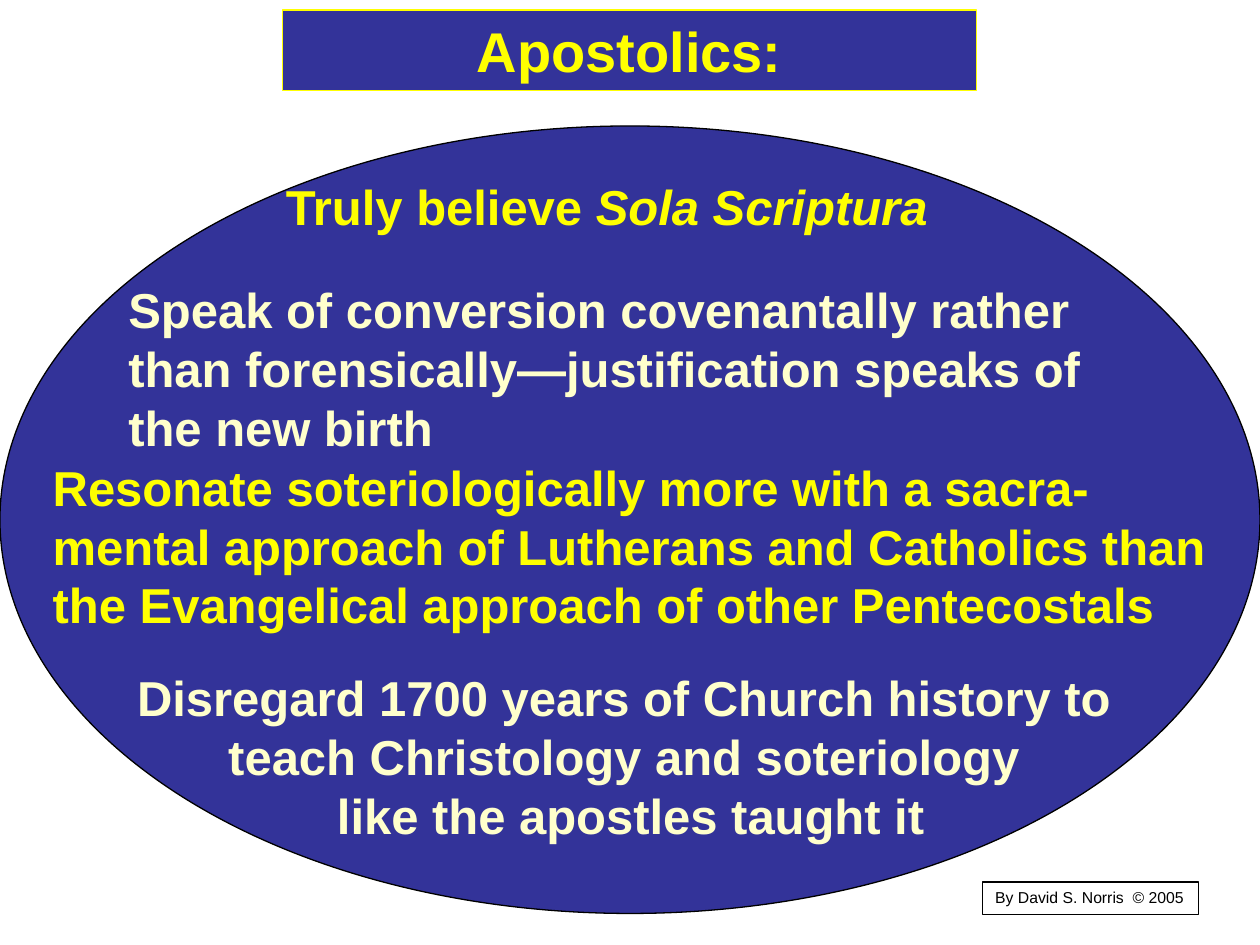
import pptx
import pptx.util
import pptx.dml.color
import pptx.enum.shapes
import pptx.enum.text

Inches = pptx.util.Inches
Shape = pptx.enum.shapes.MSO_SHAPE
Align = pptx.enum.text.PP_ALIGN

COLORS = {"blue": "333399", "yellow": "FFFF00", "cream": "FFFFCC", "black": "000000"}


def color(name):
    return pptx.dml.color.RGBColor.from_string(COLORS[name])


def add_outlined(page, kind, place, line, fill=None):
    """Add a preset shape with a thin outline and an optional fill."""
    shape = page.shapes.add_shape(kind, *map(Inches, place))
    shape.shadow.inherit = False
    if fill:
        shape.fill.solid()
        shape.fill.fore_color.rgb = color(fill)
    else:
        shape.fill.background()
    shape.line.color.rgb = color(line)
    shape.line.width = pptx.util.Pt(0.75)
    return shape


def write(box, paragraphs, ink, size=28, bold=True, align=Align.LEFT, wrap=True):
    """Fill a box; each paragraph is a list of (text, italic) spans."""
    frame = box.text_frame
    frame.word_wrap = wrap
    frame.auto_size = pptx.enum.text.MSO_AUTO_SIZE.SHAPE_TO_FIT_TEXT
    frame.vertical_anchor = pptx.enum.text.MSO_ANCHOR.TOP
    for index, spans in enumerate(paragraphs):
        para = frame.add_paragraph() if index else frame.paragraphs[0]
        para.alignment = align
        for text, italic in spans:
            span = para.add_run()
            span.text = text
            span.font.name = "Arial"
            span.font.size = pptx.util.Pt(size)
            span.font.bold = bold
            span.font.italic = italic
            span.font.color.rgb = color(ink)


def add_statement(page, place, paragraphs, ink, **style):
    box = page.shapes.add_textbox(*map(Inches, place))
    write(box, paragraphs, ink, **style)


def main():
    deck = pptx.Presentation()
    deck.slide_width, deck.slide_height = Inches(10), Inches(7.5)
    page = deck.slides.add_slide(deck.slide_layouts[6])

    # Background ellipse and title
    add_outlined(page, Shape.OVAL, (0, 1, 10, 6.25), "black", "blue")
    title = add_outlined(page, Shape.RECTANGLE, (2.24, 0.08, 5.51, 0.64), "yellow", "blue")
    write(title, [[("Apostolics:", False)]], "yellow", size=32, align=Align.CENTER)

    # Statements, alternating yellow and cream
    add_statement(page, (2.17, 1.35, 5.33, 0.57),
                  [[("Truly believe ", False), ("Sola Scriptura", True)]],
                  "yellow", wrap=False)
    add_statement(page, (0.92, 2.17, 8.25, 1.5),
                  [[("Speak of conversion covenantally rather than forensically—"
                     "justification speaks of the new birth", False)]], "cream")
    add_statement(page, (0.32, 3.58, 9.43, 1.5),
                  [[("Resonate soteriologically more with a sacra-mental approach of "
                     "Lutherans and Catholics than the Evangelical approach of other "
                     "Pentecostals", False)]], "yellow")
    history = ["Disregard 1700 years of Church history to ",
               "teach Christology and soteriology ",
               "like the apostles taught it"]
    add_statement(page, (0.92, 5.25, 8.17, 1.5),
                  [[(text, False)] for text in history], "cream", align=Align.CENTER)

    # Credit
    credit = add_outlined(page, Shape.RECTANGLE, (7.8, 7, 1.71, 0.26), "black")
    write(credit, [[("By David S. Norris  © 2005", False)]], "black",
          size=9, bold=False, wrap=False)

    deck.save("out.pptx")


if __name__ == "__main__":
    main()
